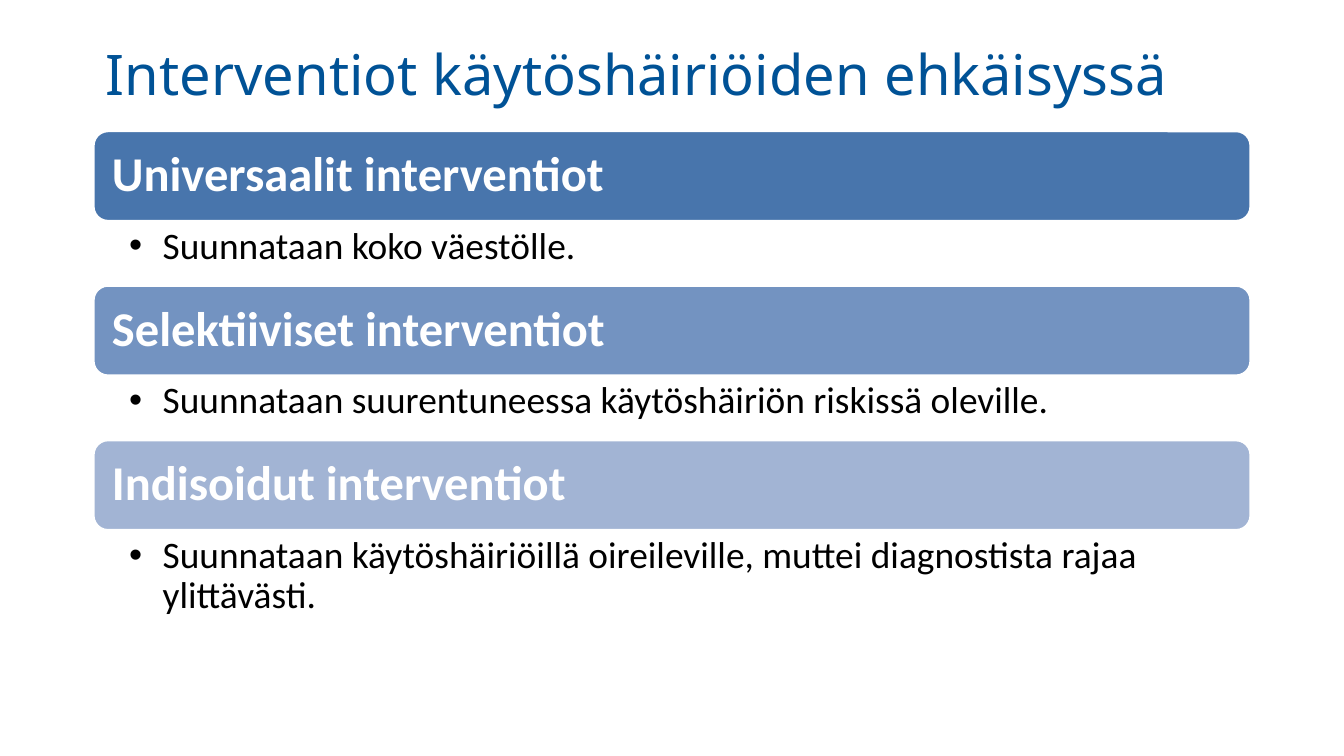
from lxml import etree
from pptx import Presentation
from pptx import util as u
from pptx.dml.color import RGBColor
from pptx.enum import shapes, text
from pptx.oxml import ns

TITLE = "Interventiot käytöshäiriöiden ehkäisyssä"
LEVELS = [
    ("Universaalit interventiot", "Suunnataan koko väestölle.", "4875AC", 0.47),
    ("Selektiiviset interventiot",
     "Suunnataan suurentuneessa käytöshäiriön riskissä oleville.", "7393C1", 0.47),
    ("Indisoidut interventiot",
     "Suunnataan käytöshäiriöillä oireileville, muttei diagnostista rajaa ylittävästi.",
     "A2B4D4", 0.69),
]
LEFT, WIDTH = 0.69, 8.62
FIRST_TOP, BAR_HEIGHT, STEP = 0.97, 0.68, 1.15

TITLE_FONT = {"name": "Noto Sans", "size": u.Pt(30)}
HEADING_FONT = {"name": "Calibri", "size": u.Pt(26), "bold": True}
BODY_FONT = {"name": "Calibri", "size": u.Pt(20)}


def color(value):
    return RGBColor.from_string(value)


def write(box, wording, font, ink, insets, anchor, spacing=1.0, bullet=False):
    frame = box.text_frame
    frame.word_wrap = True
    frame.vertical_anchor = anchor
    for side, inset in zip(("left", "top", "right", "bottom"), insets):
        setattr(frame, f"margin_{side}", u.Inches(inset))
    para = frame.paragraphs[0]
    para.alignment = text.PP_ALIGN.LEFT
    para.line_spacing = spacing
    if bullet:
        para.level = 1
        properties = para._p.get_or_add_pPr()
        properties.set("marL", str(u.Inches(0.25)))
        properties.set("indent", str(u.Inches(-0.25)))
        etree.SubElement(properties, ns.qn("a:buFont")).set("typeface", "Arial")
        etree.SubElement(properties, ns.qn("a:buChar")).set("char", "•")
    span = para.add_run()
    span.text = wording
    for name, value in font.items():
        setattr(span.font, name, value)
    span.font.color.rgb = color(ink)


def area(top, height):
    return [u.Inches(value) for value in (LEFT, top, WIDTH, height)]


def add_bar(page, top, heading, fill):
    bar = page.shapes.add_shape(
        shapes.MSO_SHAPE.ROUNDED_RECTANGLE, *area(top, BAR_HEIGHT))
    bar.shadow.inherit = False
    bar.fill.solid()
    bar.fill.fore_color.rgb = color(fill)
    bar.line.color.rgb = color("FFFFFF")
    bar.line.width = u.Pt(2)
    write(bar, heading, HEADING_FONT, "FFFFFF", [0.11] * 4,
          text.MSO_ANCHOR.MIDDLE, 0.9)


deck = Presentation()
deck.slide_width = u.Inches(10)
deck.slide_height = deck.slide_width * 9 // 16
page = deck.slides.add_slide(deck.slide_layouts[6])

title = page.shapes.add_textbox(*area(0.24, 0.61))
write(title, TITLE, TITLE_FONT, "005296", (0.1, 0.05, 0.1, 0.05),
      text.MSO_ANCHOR.MIDDLE)

for index, (heading, detail, fill, height) in enumerate(LEVELS):
    top = FIRST_TOP + index * STEP
    add_bar(page, top, heading, fill)
    body = page.shapes.add_textbox(*area(top + BAR_HEIGHT, height))
    write(body, detail, BODY_FONT, "000000", (0.27, 0.04, 0.2, 0.04),
          text.MSO_ANCHOR.TOP, 0.9, bullet=True)

deck.save("out.pptx")
